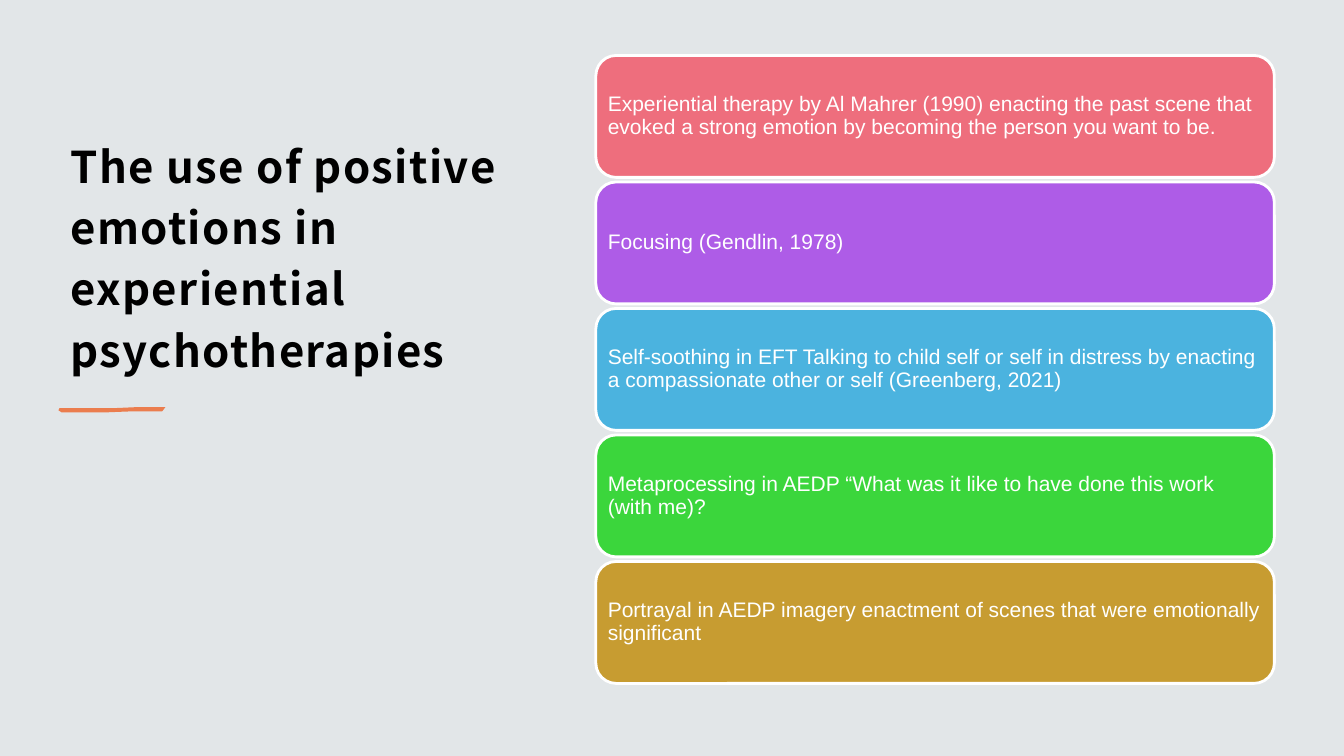
from pptx import Presentation
from pptx.dml.color import RGBColor
from pptx.enum.shapes import MSO_SHAPE as Preset
from pptx.enum.text import MSO_ANCHOR as Anchor, PP_ALIGN as Align
from pptx.util import Inches, Pt

COLORS = {
    "background": "E2E6E8",
    "title": "000000",
    "accent": "EB7D4E",
    "white": "FFFFFF",
    "coral": "EE6E7D",
    "purple": "AE5CE7",
    "blue": "4BB3DF",
    "green": "3BD63C",
    "gold": "C79C31",
}
THERAPIES = [
    ("coral", "Experiential therapy by Al Mahrer (1990) enacting the past scene that "
              "evoked a strong emotion by becoming the person you want to be."),
    ("purple", "Focusing (Gendlin, 1978)"),
    ("blue", "Self-soothing in EFT Talking to child self or self in distress by enacting "
             "a compassionate other or self (Greenberg, 2021)"),
    ("green", "Metaprocessing in AEDP “What was it like to have done this work (with me)?"),
    ("gold", "Portrayal in AEDP imagery enactment of scenes that were emotionally significant"),
]
CARD_LEFT, CARD_TOP, CARD_WIDTH, CARD_HEIGHT = 5.91, 0.55, 6.73, 1.21
CARD_PITCH = 1.255
# Hundredths of an inch
STROKE_OUTLINE = [(59, 405), (88, 405), (111, 405), (133, 404), (164, 404),
                  (161, 408), (133, 408), (107, 409), (61, 409), (58, 407)]


def color(name):
    return RGBColor.from_string(COLORS[name])


def write_text(shape, text, anchor, inset, line_spacing, size, font_name, color_name):
    """Fill a shape with one left-aligned, wrapped paragraph and return its run."""
    frame = shape.text_frame
    frame.text = text
    frame.word_wrap = True
    frame.vertical_anchor = anchor
    frame.margin_left = frame.margin_right = Inches(inset)
    frame.margin_top = frame.margin_bottom = Inches(inset)
    paragraph = frame.paragraphs[0]
    paragraph.alignment = Align.LEFT
    paragraph.line_spacing = line_spacing
    run = paragraph.runs[0]
    run.font.size = Pt(size)
    run.font.name = font_name
    run.font.color.rgb = color(color_name)
    return run


presentation = Presentation()
presentation.slide_width = Inches(13.33)
presentation.slide_height = Inches(7.5)
slide = presentation.slides.add_slide(presentation.slide_layouts[6])
slide.background.fill.solid()
slide.background.fill.fore_color.rgb = color("background")

# Title
title = slide.shapes.add_textbox(Inches(0.58), Inches(0.7), Inches(4.67), Inches(3.13))
title_run = write_text(title, "The use of positive emotions in experiential psychotherapies",
                       Anchor.BOTTOM, 0.12, 1.17, 31.2, "Noto Sans CJK JP", "title")
title.text_frame.margin_bottom = Inches(0.1)
title_run.font.bold = True
title_properties = title_run.font._element
title_properties.set("spc", "100")

# Brush stroke under the title
start, *rest = STROKE_OUTLINE
builder = slide.shapes.build_freeform(*start, scale=Inches(0.01))
builder.add_line_segments(rest, close=True)
stroke = builder.convert_to_shape()
stroke.shadow.inherit = False
stroke.fill.solid()
stroke.fill.fore_color.rgb = color("accent")
stroke.line.fill.background()

# One card for each therapy
for row, (card_color, text) in enumerate(THERAPIES):
    card = slide.shapes.add_shape(
        Preset.ROUNDED_RECTANGLE, Inches(CARD_LEFT), Inches(CARD_TOP + row * CARD_PITCH),
        Inches(CARD_WIDTH), Inches(CARD_HEIGHT))
    card.shadow.inherit = False
    card.fill.solid()
    card.fill.fore_color.rgb = color(card_color)
    card.line.color.rgb = color("white")
    card.line.width = Pt(2)
    write_text(card, text, Anchor.MIDDLE, 0.06, 0.9, 15, "Arial", "white")

presentation.save("out.pptx")
